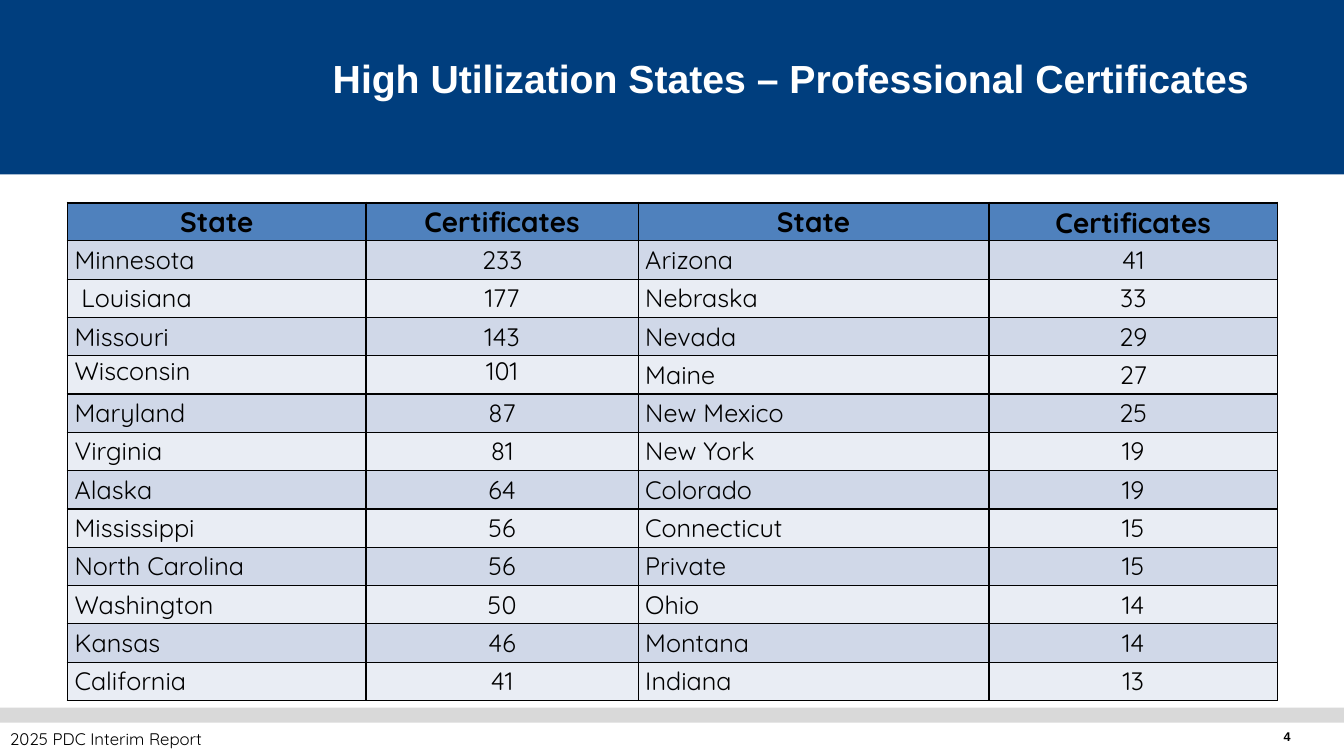
import pptx
import pptx.dml.color
import pptx.enum.shapes
import pptx.enum.text
import pptx.oxml.ns
import pptx.util
from lxml import etree

Inches = pptx.util.Inches
Pt = pptx.util.Pt
Align = pptx.enum.text.PP_ALIGN
Anchor = pptx.enum.text.MSO_ANCHOR
AutoSize = pptx.enum.text.MSO_AUTO_SIZE

TITLE = "High Utilization States – Professional Certificates"
FOOTER = "2025 PDC Interim Report"
PAGE_NUMBER = "4"
HEADER = ("State", "Certificates", "State", "Certificates")
STATES = [
    ("Minnesota", 233, "Arizona", 41),
    (" Louisiana", 177, "Nebraska", 33),
    ("Missouri", 143, "Nevada", 29),
    ("Wisconsin", 101, "Maine", 27),
    ("Maryland", 87, "New Mexico", 25),
    ("Virginia", 81, "New York", 19),
    ("Alaska", 64, "Colorado", 19),
    ("Mississippi", 56, "Connecticut", 15),
    ("North Carolina", 56, "Private", 15),
    ("Washington", 50, "Ohio", 14),
    ("Kansas", 46, "Montana", 14),
    ("California", 41, "Indiana", 13),
]
BANDS = [(0, 1.73, "003E7E"), (7.02, 0.15, "D9D9D9")]  # top, height, colour
COLUMN_WIDTHS = (2.96, 2.7, 3.48, 2.86)
ROW_HEIGHT = 0.38
HEADER_FILL = "4F81BD"
ROW_FILLS = ("D0D8E8", "E9EDF4")
BLACK, WHITE = "000000", "FFFFFF"
TOP_ANCHORED = {(4, 0), (4, 1)}
BOTTOM_ANCHORED = {(0, 3)}


def color(value):
    return pptx.dml.color.RGBColor.from_string(value)


def write(text_frame, text, size, font_name, font_color, bold=False, align=Align.LEFT):
    paragraph = text_frame.paragraphs[0]
    paragraph.alignment = align
    run = paragraph.add_run()
    run.text = text
    run.font.size = Pt(size)
    run.font.name = font_name
    run.font.bold = bold
    run.font.color.rgb = color(font_color)


def add_label(slide, position, text, size, font_name, **style):
    box = slide.shapes.add_textbox(*map(Inches, position))
    write(box.text_frame, text, size, font_name, BLACK, **style)
    return box.text_frame


def set_borders(cell, widths):
    """Draw black cell borders; widths maps L, R, T and B to points."""
    properties = cell._tc.get_or_add_tcPr()
    for side, width in widths.items():
        line = etree.SubElement(properties, pptx.oxml.ns.qn(f"a:ln{side}"), w=str(Pt(width)))
        fill = etree.SubElement(line, pptx.oxml.ns.qn("a:solidFill"))
        etree.SubElement(fill, pptx.oxml.ns.qn("a:srgbClr"), val=BLACK)


def fill_cell(cell, row, column, text):
    is_header = row == 0
    centered = is_header or column % 2 == 1
    last_column = len(COLUMN_WIDTHS) - 1
    set_borders(cell, {
        "L": 1.5 if column == 0 else 1,
        "R": 1.5 if column == last_column else 1,
        "T": 1.5 if is_header else 1,
        "B": 1,
    })
    cell.fill.solid()
    cell.fill.fore_color.rgb = color(HEADER_FILL if is_header else ROW_FILLS[(row - 1) % 2])
    cell.margin_left = cell.margin_right = Inches(0 if is_header else 0.07)
    cell.margin_top = cell.margin_bottom = 0
    if (row, column) in TOP_ANCHORED:
        cell.vertical_anchor = Anchor.TOP
    elif (row, column) in BOTTOM_ANCHORED:
        cell.vertical_anchor = Anchor.BOTTOM
    else:
        cell.vertical_anchor = Anchor.MIDDLE
    write(cell.text_frame, str(text), 20 if is_header else 18, "Quicksand", BLACK,
          bold=is_header, align=Align.CENTER if centered else Align.LEFT)


def add_bands(slide, width):
    for top, height, band_color in BANDS:
        band = slide.shapes.add_shape(pptx.enum.shapes.MSO_SHAPE.RECTANGLE,
                                      0, Inches(top), width, Inches(height))
        band.shadow.inherit = False
        band.fill.solid()
        band.fill.fore_color.rgb = color(band_color)
        band.line.fill.background()


def add_title(slide):
    title = slide.shapes.title
    title.left, title.top, title.width, title.height = map(Inches, (3.2, 0.49, 9.36, 0.9))
    title.text_frame.auto_size = AutoSize.NONE
    title.text_frame.vertical_anchor = Anchor.TOP
    write(title.text_frame, TITLE, 28, "Arial", WHITE, bold=True)
    # Bring the title in front of the blue band.
    title.element.getparent().append(title.element)


def add_state_table(slide):
    rows = [HEADER, *STATES]
    table = slide.shapes.add_table(
        len(rows), len(COLUMN_WIDTHS), Inches(0.67), Inches(2.01),
        Inches(sum(COLUMN_WIDTHS)), Inches(ROW_HEIGHT * len(rows))).table
    table.first_row = table.horz_banding = False
    for column, width in zip(table.columns, COLUMN_WIDTHS):
        column.width = Inches(width)
    for row, values in enumerate(rows):
        table.rows[row].height = Inches(ROW_HEIGHT)
        for column, text in enumerate(values):
            fill_cell(table.cell(row, column), row, column, text)


def main():
    presentation = pptx.Presentation()
    presentation.slide_width = Inches(13.33)
    presentation.slide_height = Inches(7.5)
    slide = presentation.slides.add_slide(presentation.slide_layouts[5])
    add_bands(slide, presentation.slide_width)
    add_title(slide)
    add_state_table(slide)
    number = add_label(slide, (11.4, 7.18, 1.5, 0.17), PAGE_NUMBER, 9, "Arial",
                       bold=True, align=Align.RIGHT)
    number.word_wrap = True
    footer = add_label(slide, (0, 7.18, 2.17, 0.3), FOOTER, 12, "Quicksand")
    footer.word_wrap = False
    footer.auto_size = AutoSize.SHAPE_TO_FIT_TEXT
    presentation.save("out.pptx")


if __name__ == "__main__":
    main()
